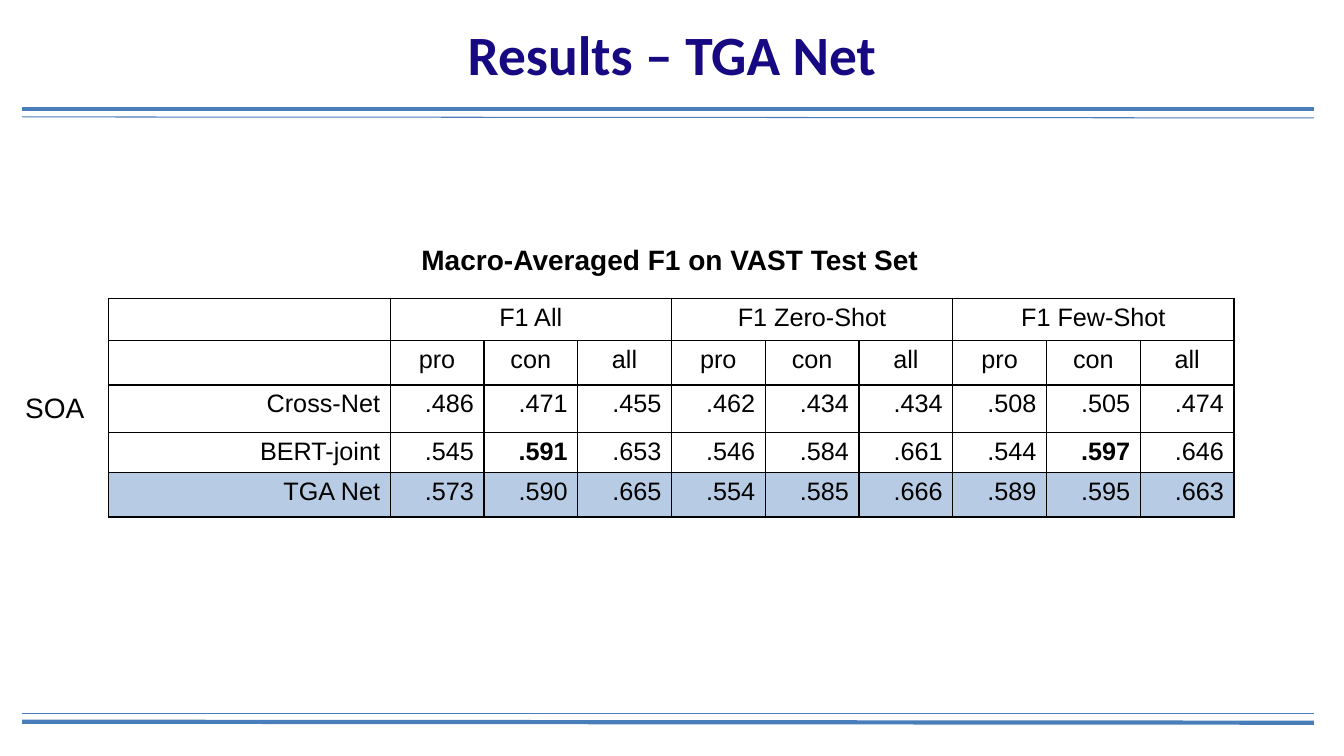
from lxml.etree import SubElement
from pptx import Presentation
from pptx.dml.color import RGBColor
from pptx.enum.shapes import MSO_CONNECTOR
from pptx.enum.text import MSO_ANCHOR, MSO_AUTO_SIZE, PP_ALIGN
from pptx.oxml import parse_xml
from pptx.oxml.ns import nsdecls, qn
from pptx.util import Inches, Pt

hues = {"rule": "4A7EBB", "title": "170981", "ink": "000000", "band": "B7CCE4"}
looks = {
    "title": {"name": "Calibri", "size": Pt(39.6), "bold": True},
    "label": {"name": "Arial", "size": Pt(20), "bold": False},
    "head": {"name": "Arial", "size": Pt(20), "bold": True},
    "cell": {"name": "Arial", "size": Pt(18), "bold": False},
    "best": {"name": "Arial", "size": Pt(18), "bold": True},
}


def write(frame, text, look, align, hue="ink"):
    para = frame.paragraphs[0]
    para.alignment = align
    run = para.add_run()
    run.text = text
    for key, value in looks[look].items():
        setattr(run.font, key, value)
    run.font.color.rgb = RGBColor.from_string(hues[hue])


def inset(frame):
    for side in ("left", "right", "top", "bottom"):
        setattr(frame, f"margin_{side}", Inches(0.05))


deck = Presentation()
deck.slide_width, deck.slide_height = Inches(13.33), Inches(7.5)
slide = deck.slides.add_slide(deck.slide_layouts[5])

rules = [(1.08, 1.08, 3), (1.16, 1.17, 0.75), (7.16, 7.17, 3), (7.08, 7.08, 0.75)]
for start, end, width in rules:
    rule = slide.shapes.add_connector(
        MSO_CONNECTOR.STRAIGHT, Inches(0.22), Inches(start), Inches(13.03), Inches(end))
    rule.line.color.rgb = RGBColor.from_string(hues["rule"])
    rule.line.width = Pt(width)
    SubElement(rule._element.spPr, qn("a:effectLst"))

title = slide.shapes.title
title.left, title.top = Inches(0), Inches(0.13)
title.width, title.height = Inches(13.33), Inches(0.79)
frame = title.text_frame
inset(frame)
frame.vertical_anchor = MSO_ANCHOR.MIDDLE
frame.auto_size = MSO_AUTO_SIZE.NONE
write(frame, "Results – TGA Net", "title", PP_ALIGN.CENTER, "title")

groups = ["F1 All", "F1 Zero-Shot", "F1 Few-Shot"]
rows = [
    [""] + [text for group in groups for text in (group, "", "")],
    [""] + ["pro", "con", "all"] * 3,
    "Cross-Net .486 .471 .455 .462 .434 .434 .508 .505 .474".split(),
    "BERT-joint .545 .591 .653 .546 .584 .661 .544 .597 .646".split(),
    ["TGA Net"] + ".573 .590 .665 .554 .585 .666 .589 .595 .663".split(),
]
highs = [0.42, 0.44, 0.47, 0.4, 0.44]
best = {(3, 2), (3, 8)}

grid = slide.shapes.add_table(
    5, 10, Inches(1.08), Inches(2.96), Inches(11.16), Inches(2.17)).table
grid.first_row = grid.horz_banding = False
for col, column in enumerate(grid.columns):
    column.width = Inches(0.93 if col else 2.79)
for col in (1, 4, 7):
    grid.cell(0, col).merge(grid.cell(0, col + 2))

for row, texts in enumerate(rows):
    grid.rows[row].height = Inches(highs[row])
    for col, text in enumerate(texts):
        cell = grid.cell(row, col)
        props = cell._tc.get_or_add_tcPr()
        for side in "LRTB":
            props.append(parse_xml(
                f'<a:ln{side} {nsdecls("a")} w="12700"><a:solidFill>'
                f'<a:srgbClr val="{hues["ink"]}"/></a:solidFill></a:ln{side}>'))
        if row == 4:
            cell.fill.solid()
            cell.fill.fore_color.rgb = RGBColor.from_string(hues["band"])
        else:
            cell.fill.background()
        if text:
            look = "best" if (row, col) in best else "cell"
            align = PP_ALIGN.CENTER if row < 2 else PP_ALIGN.RIGHT
            write(cell.text_frame, text, look, align)

notes = [
    ("SOA", "label", 0.2, 3.82, 0.69),
    ("Macro-Averaged F1 on VAST Test Set", "head", 4.13, 2.36, 5.07),
]
for text, look, left, top, width in notes:
    box = slide.shapes.add_textbox(Inches(left), Inches(top), Inches(width), Inches(0.44))
    frame = box.text_frame
    inset(frame)
    frame.word_wrap = True
    frame.auto_size = MSO_AUTO_SIZE.SHAPE_TO_FIT_TEXT
    write(frame, text, look, PP_ALIGN.LEFT)

deck.save("out.pptx")
